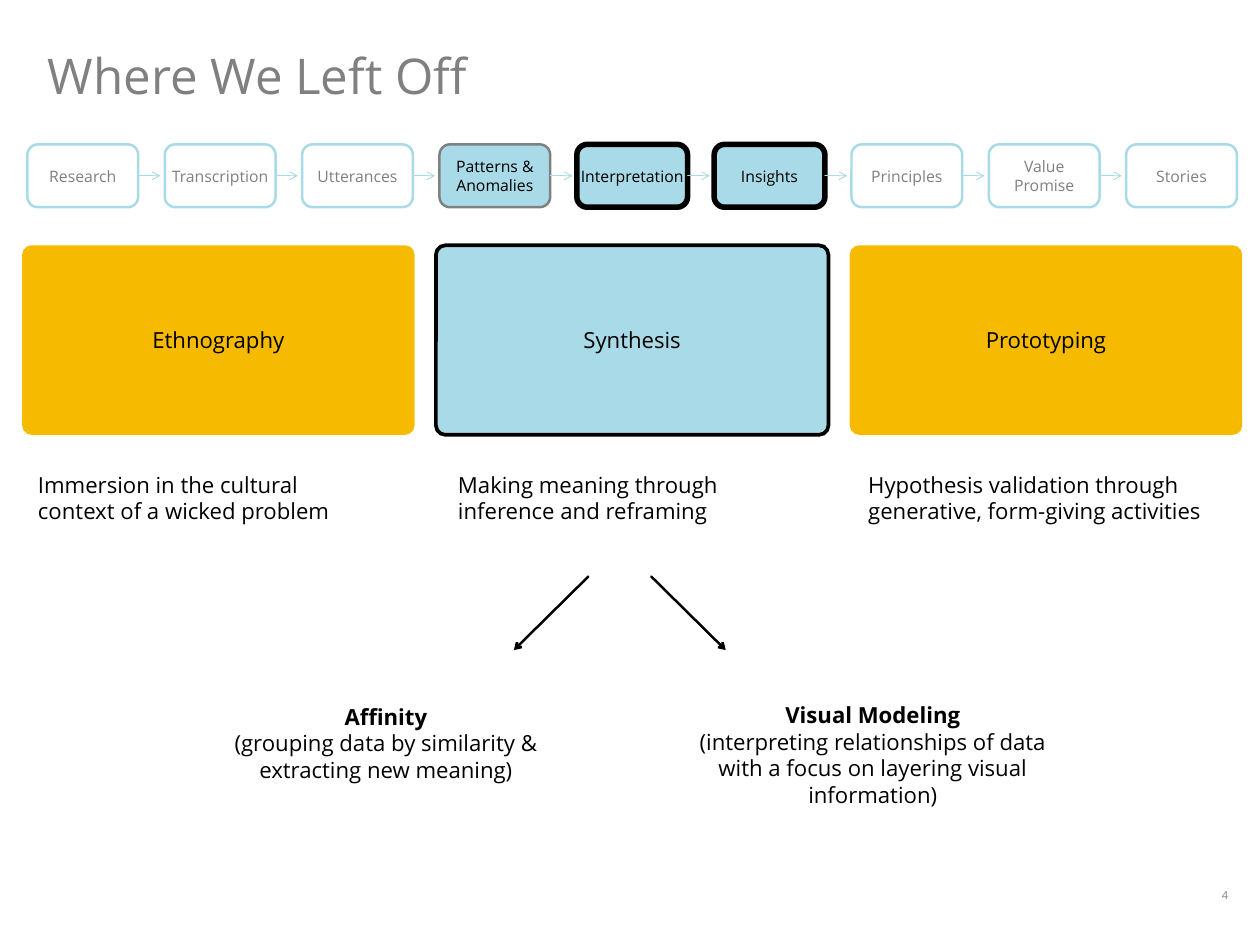
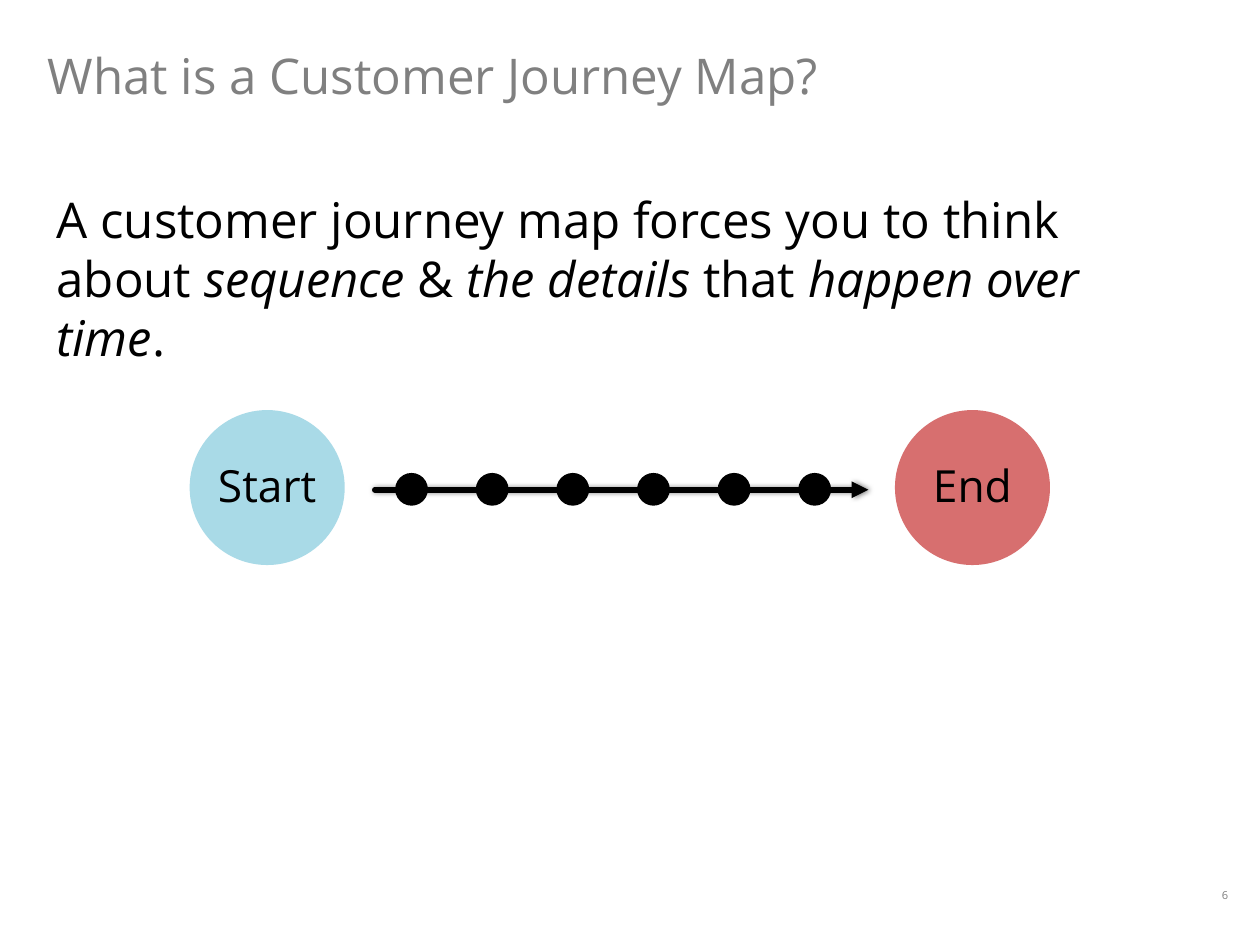
from dataclasses import dataclass
from typing import Optional, Sequence

from lxml import etree
from pptx import Presentation
from pptx.dml.color import RGBColor
from pptx.enum.shapes import MSO_CONNECTOR as Connector, MSO_SHAPE as Preset
from pptx.enum.text import MSO_ANCHOR as Anchor, PP_ALIGN as Align
from pptx.oxml.ns import qn
from pptx.util import Inches, Pt

FONT = "Open Sans"
COLORS = {
    "gray": "808080",
    "black": "000000",
    "white": "FFFFFF",
    "blue": "A9DAE7",
    "yellow": "F6BB00",
    "red": "D76F6F",
}


@dataclass(frozen=True)
class Box:
    left: float
    top: float
    width: float
    height: float

    def inches(self) -> list:
        return [Inches(n) for n in (self.left, self.top, self.width, self.height)]


@dataclass(frozen=True)
class Run:
    text: str
    bold: bool = False
    italic: bool = False


@dataclass(frozen=True)
class Step:
    lines: Sequence[str]
    fill: str = "white"
    line: str = "blue"
    line_width: float = 2
    color: str = "gray"


@dataclass(frozen=True)
class Pillar:
    name: str
    fill: str
    line: Optional[str]
    caption: str
    caption_left: float


@dataclass(frozen=True)
class Method:
    name: str
    detail: str
    box: Box
    arrow_start: float
    arrow_end: float


TITLE_BOX = Box(0.54, 0.51, 12.67, 0.67)
NUMBER_BOX = Box(13.57, 9.98, 0.51, 0.3)

ACTIVE = {"fill": "blue", "line": "black", "line_width": 4.5, "color": "black"}
STEPS = [
    Step(["Research"]),
    Step(["Transcription"]),
    Step(["Utterances"]),
    Step(["Patterns & Anomalies"], fill="blue", line="gray", color="black"),
    Step(["Interpretation"], **ACTIVE),
    Step(["Insights"], **ACTIVE),
    Step(["Principles"]),
    Step(["Value", "Promise"]),
    Step(["Stories"]),
]
STEP_BOX = Box(0.31, 1.63, 1.25, 0.71)
STEP_PITCH = 1.55
STEP_ARROW = 0.25

PILLARS = [
    Pillar("Ethnography", "yellow", None,
           "Immersion in the cultural context of a wicked problem", 0.33),
    Pillar("Synthesis", "blue", "black",
           "Making meaning through inference and reframing", 5.07),
    Pillar("Prototyping", "yellow", None,
           "Hypothesis validation through generative, form-giving activities", 9.7),
]
PILLAR_BOX = Box(0.25, 2.77, 4.43, 2.14)
PILLAR_PITCH = 4.67

METHODS = [
    Method("Affinity", "(grouping data by similarity & extracting new meaning)",
           Box(2.05, 7.89, 4.61, 1.01), 6.64, 5.8),
    Method("Visual Modeling",
           "(interpreting relationships of data with a focus on layering visual information)",
           Box(7.56, 7.87, 4.58, 1.01), 7.35, 8.19),
]

DEFINITION = [
    Run("A customer journey map forces you to think about "),
    Run("sequence", italic=True),
    Run(" & "),
    Run("the details ", italic=True),
    Run("that "),
    Run("happen over time", italic=True),
    Run("."),
]
ENDPOINTS = [("Start", 2.14, "blue"), ("End", 10.1, "red")]
ENDPOINT_SIZE = 1.75
DOT_COUNT, DOT_PITCH, DOT_SIZE = 6, 0.91, 0.37


def rgb(name: str) -> RGBColor:
    return RGBColor.from_string(COLORS[name])


def write_text(shape, paragraphs, *, size: float, color: str = "black",
               align=Align.LEFT, anchor=Anchor.TOP,
               insets=(0.1, 0.05, 0.1, 0.05)) -> None:
    """Fill a shape with paragraphs, each a string or a list of runs."""
    frame = shape.text_frame
    frame.word_wrap = True
    frame.vertical_anchor = anchor
    (frame.margin_left, frame.margin_top,
     frame.margin_right, frame.margin_bottom) = map(Inches, insets)
    for index, content in enumerate(paragraphs):
        paragraph = frame.paragraphs[0] if index == 0 else frame.add_paragraph()
        paragraph.alignment = align
        for part in [Run(content)] if isinstance(content, str) else content:
            run = paragraph.add_run()
            run.text = part.text
            font = run.font
            font.name, font.size = FONT, Pt(size)
            font.bold, font.italic = part.bold, part.italic
            font.color.rgb = rgb(color)


def add_text(slide, box: Box, paragraphs, **text_format) -> None:
    write_text(slide.shapes.add_textbox(*box.inches()), paragraphs, **text_format)


def add_shape(slide, preset, box: Box, fill: str, line: Optional[str] = None,
              line_width: float = 0):
    shape = slide.shapes.add_shape(preset, *box.inches())
    shape.shadow.inherit = False
    shape.fill.solid()
    shape.fill.fore_color.rgb = rgb(fill)
    if line:
        shape.line.color.rgb = rgb(line)
        shape.line.width = Pt(line_width)
    else:
        shape.line.fill.background()
    return shape


def add_arrow(slide, start, end, color: str, width: float, head: str = "arrow",
              shadow: bool = False):
    points = [Inches(n) for n in (*start, *end)]
    arrow = slide.shapes.add_connector(Connector.STRAIGHT, *points)
    arrow.line.color.rgb = rgb(color)
    arrow.line.width = Pt(width)
    outline = arrow.line._get_or_add_ln()
    outline.set("cap", "rnd")
    etree.SubElement(outline, qn("a:tailEnd"), type=head)
    effects = etree.SubElement(arrow._element.spPr, qn("a:effectLst"))
    if shadow:
        outer = etree.SubElement(effects, qn("a:outerShdw"), blurRad=str(Pt(4)),
                                 dist=str(Pt(1)), dir="0", rotWithShape="0")
        tint = etree.SubElement(outer, qn("a:srgbClr"), val=COLORS["black"])
        etree.SubElement(tint, qn("a:alpha"), val="50000")
    return arrow


def add_titled_slide(presentation, title: str, number: int):
    slide = presentation.slides.add_slide(presentation.slide_layouts[6])
    add_text(slide, TITLE_BOX, [title], size=40, color="gray",
             anchor=Anchor.MIDDLE, insets=(0, 0, 0, 0))
    add_text(slide, NUMBER_BOX, [str(number)], size=9, color="gray",
             align=Align.CENTER)
    return slide


def draw_steps(slide) -> None:
    middle = STEP_BOX.top + STEP_BOX.height / 2
    for index, step in enumerate(STEPS):
        box = Box(STEP_BOX.left + index * STEP_PITCH, STEP_BOX.top,
                  STEP_BOX.width, STEP_BOX.height)
        shape = add_shape(slide, Preset.ROUNDED_RECTANGLE, box, step.fill,
                          step.line, step.line_width)
        write_text(shape, step.lines, size=12.8, color=step.color,
                   align=Align.CENTER, anchor=Anchor.MIDDLE,
                   insets=(0, 0.05, 0, 0.05))
        if index < len(STEPS) - 1:
            right = box.left + box.width
            arrow = add_arrow(slide, (right, middle), (right + STEP_ARROW, middle),
                              "blue", 0.75)
            arrow.begin_connect(shape, 3)


def draw_pillars(slide) -> None:
    for index, pillar in enumerate(PILLARS):
        box = Box(PILLAR_BOX.left + index * PILLAR_PITCH, PILLAR_BOX.top,
                  PILLAR_BOX.width, PILLAR_BOX.height)
        shape = add_shape(slide, Preset.ROUNDED_RECTANGLE, box, pillar.fill,
                          pillar.line, 3)
        shape.adjustments[0] = 0.05
        write_text(shape, [pillar.name], size=18, align=Align.CENTER,
                   anchor=Anchor.MIDDLE)
        add_text(slide, Box(pillar.caption_left, 5.27, 4.02, 0.71),
                 [pillar.caption], size=18)


def draw_methods(slide) -> None:
    for method in METHODS:
        add_arrow(slide, (method.arrow_start, 6.51), (method.arrow_end, 7.34),
                  "black", 2)
        add_text(slide, method.box, [[Run(method.name, bold=True)], method.detail],
                 size=18, align=Align.CENTER)


def draw_journey(slide) -> None:
    add_arrow(slide, (4.23, 5.53), (9.8, 5.53), "black", 4.5, head="triangle",
              shadow=True)
    for name, left, fill in ENDPOINTS:
        circle = add_shape(slide, Preset.OVAL,
                           Box(left, 4.63, ENDPOINT_SIZE, ENDPOINT_SIZE), fill)
        write_text(circle, [name], size=36, align=Align.CENTER,
                   anchor=Anchor.MIDDLE, insets=(0, 0, 0, 0.06))
    for index in range(DOT_COUNT):
        add_shape(slide, Preset.OVAL,
                  Box(4.46 + index * DOT_PITCH, 5.34, DOT_SIZE, DOT_SIZE), "black")


def main() -> None:
    presentation = Presentation()
    presentation.slide_width = Inches(14.22)
    presentation.slide_height = Inches(10.67)

    recap = add_titled_slide(presentation, "Where We Left Off", 4)
    draw_steps(recap)
    draw_pillars(recap)
    draw_methods(recap)

    journey = add_titled_slide(presentation, "What is a Customer Journey Map?", 6)
    add_text(journey, Box(0.54, 2.09, 12.94, 3.42), [DEFINITION], size=40)
    draw_journey(journey)

    presentation.save("out.pptx")


if __name__ == "__main__":
    main()
